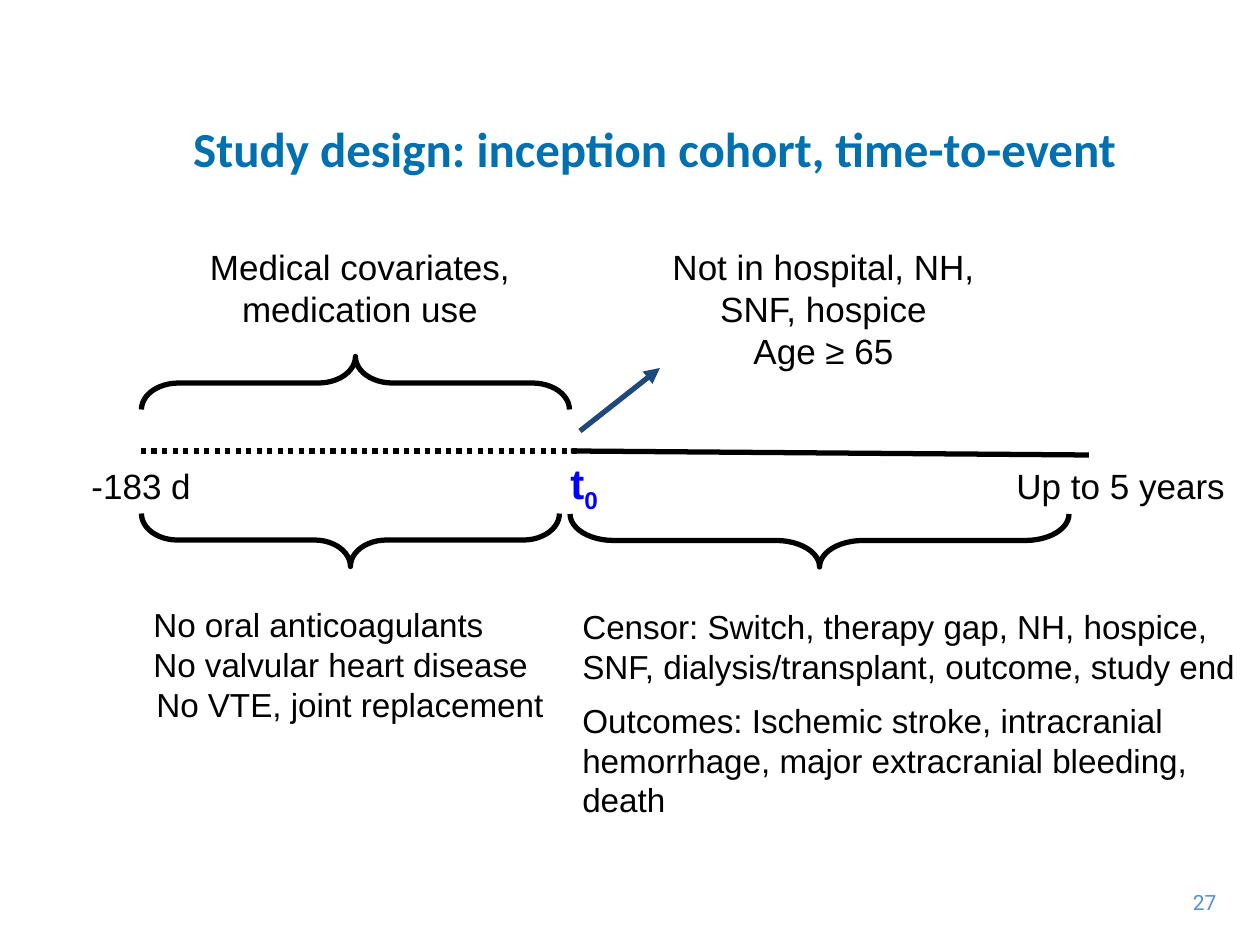
from lxml import etree
from pptx import Presentation, util as u
from pptx.dml.color import RGBColor
from pptx.enum import dml, shapes, text
from pptx.oxml.ns import qn

PX = 914400 / 126
HUES = {"ink": "000000", "title": "0070B0", "start": "0000FF",
        "arrow": "1F497D", "page": "558ED5"}
SIDE = text.PP_ALIGN


def write(para, words, size=20, hue="ink", face="Arial", bold=False):
    run = para.add_run()
    run.text = words
    font = run.font
    font.size, font.name, font.bold = u.Pt(size), face, bold
    font.color.rgb = RGBColor.from_string(HUES[hue])
    return run


def add_box(at, *lines, align=SIDE.LEFT, after=0, wrap=True, **style):
    """Add a text box with one paragraph per line and return its frame."""
    frame = slide.shapes.add_textbox(*[round(n * PX) for n in at]).text_frame
    frame.word_wrap = wrap
    for i, line in enumerate(lines):
        para = frame.add_paragraph() if i else frame.paragraphs[0]
        para.alignment, para.space_after = align, u.Pt(after)
        write(para, line, **style)
    return frame


prs = Presentation()
prs.slide_width, prs.slide_height = u.Inches(10), u.Inches(7.5)
slide = prs.slides.add_slide(prs.slide_layouts[6])

add_box((1178, 883, 51, 38), "27", align=SIDE.RIGHT, wrap=False,
        size=12, hue="page", face="Roboto")
title = add_box((69, 69, 1171, 157),
                "Study design: inception cohort, time-to-event",
                align=SIDE.CENTER, size=28, hue="title", face="Calibri", bold=True)
title.vertical_anchor = text.MSO_ANCHOR.MIDDLE

# Time axis and the arrow from its start to the entry criteria
for ends, hue, dash, head in [
    ((571, 451, 1089, 455), "ink", None, False),
    ((141, 451, 580, 451), "ink", dml.MSO_LINE.ROUND_DOT, False),
    ((580, 431, 660, 368), "arrow", None, True),
]:
    rule = slide.shapes.add_connector(
        shapes.MSO_CONNECTOR.STRAIGHT, *[round(n * PX) for n in ends])
    rule.line.width = u.Pt(3)
    rule.line.color.rgb = RGBColor.from_string(HUES[hue])
    if dash:
        rule.line.dash_style = dash
    if head:
        etree.SubElement(rule.line._get_or_add_ln(), qn("a:tailEnd"), type="triangle")
    etree.SubElement(rule._element.spPr, qn("a:effectLst"))

# Axis labels share one line, set apart by tab stops
axis = add_box((79, 451, 1167, 64), "-183 d\t").paragraphs[0]
tabs = etree.SubElement(axis._p.get_or_add_pPr(), qn("a:tabLst"))
for stop in (479, 925):
    etree.SubElement(tabs, qn("a:tab"), pos=str(round(stop * PX)), algn="l")
write(axis, "t", size=24, hue="start", bold=True)
sub = write(axis, "0", size=24, hue="start", bold=True)
sub.font._element.set("baseline", "-25000")
write(axis, "\tUp to 5 years")

# Braces stand upright before they are turned
KIND = shapes.MSO_SHAPE
for kind, at, turn, curve in [
    (KIND.RIGHT_BRACE, (329, 169, 53, 428), 270, 0.7),
    (KIND.LEFT_BRACE, (324, 331, 53, 418), 270, 0.68),
    (KIND.RIGHT_BRACE, (793, 291, 53, 499), 90, 0.82),
]:
    brace = slide.shapes.add_shape(kind, *[round(n * PX) for n in at])
    brace.rotation = turn
    brace.adjustments[0], brace.adjustments[1] = curve, 0.5
    brace.shadow.inherit = False
    brace.fill.background()
    brace.line.width = u.Pt(3)
    brace.line.color.rgb = RGBColor.from_string(HUES["ink"])

add_box((192, 239, 336, 97), "Medical covariates, medication use", align=SIDE.CENTER)
add_box((650, 239, 347, 139), "Not in hospital, NH, SNF, hospice", "Age ≥ 65",
        align=SIDE.CENTER)
needs = add_box((141, 598, 418, 134), "No oral anticoagulants",
                "No valvular heart disease", "No VTE, joint replacement", size=19)
needs.paragraphs[2].alignment = SIDE.CENTER
add_box((570, 600, 690, 231),
        "Censor: Switch, therapy gap, NH, hospice, SNF, dialysis/transplant, "
        "outcome, study end",
        "Outcomes: Ischemic stroke, intracranial hemorrhage, "
        "major extracranial bleeding, death",
        after=8, size=19)

prs.save("out.pptx")
